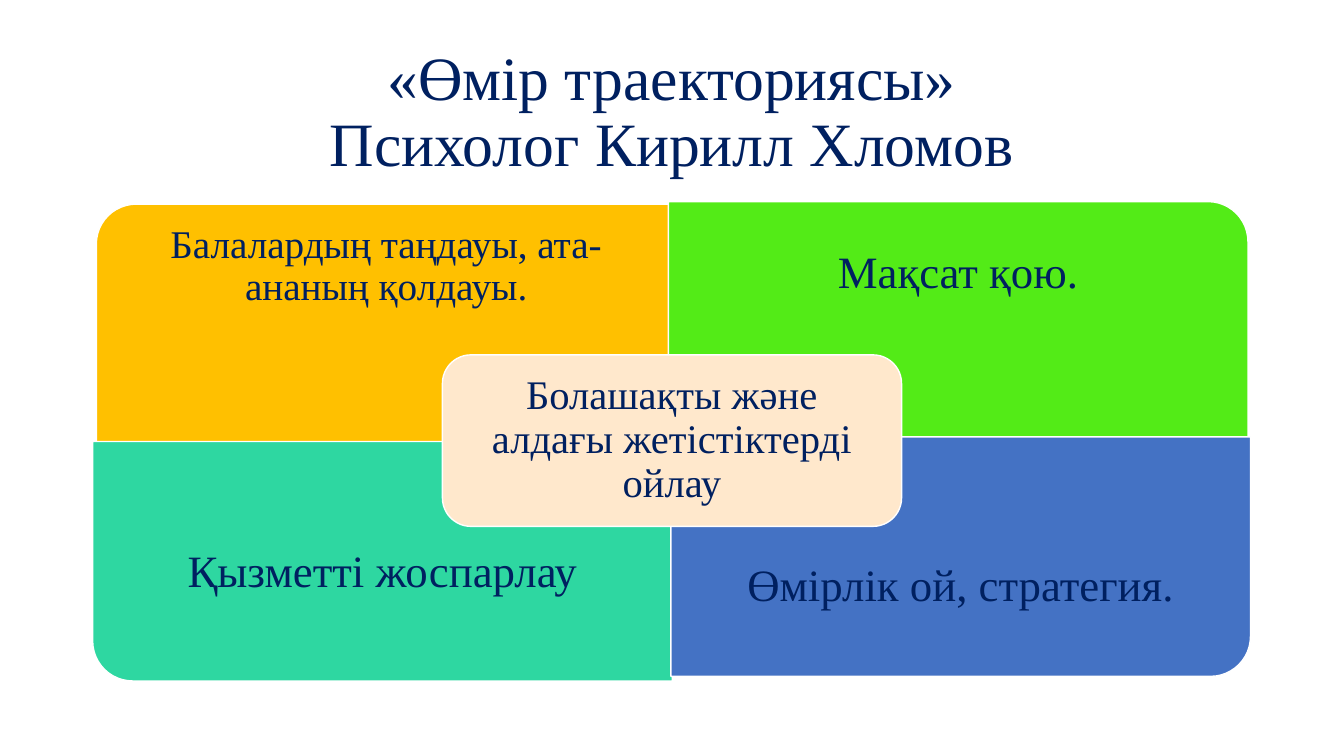
from pptx import Presentation
from pptx import util as u
from pptx.dml.color import RGBColor
from pptx.enum import shapes, text

INK = "002060"
QUAD_W, QUAD_H = 414, 171
LABEL_H = 80


def paint(color_format, value):
    """Set a solid fill or font colour from a hex string."""
    color_format.rgb = RGBColor.from_string(value)


def write(sp, words, size, spacing=0.9, inset=0):
    """Put centred text into a shape or text box."""
    tf = sp.text_frame
    margin = u.Pt(inset)
    frame = dict(word_wrap=True, vertical_anchor=text.MSO_ANCHOR.MIDDLE,
                 margin_left=margin, margin_right=margin,
                 margin_top=margin, margin_bottom=margin)
    for name, value in frame.items():
        setattr(tf, name, value)
    p = tf.paragraphs[0]
    p.text = words
    p.alignment, p.line_spacing = text.PP_ALIGN.CENTER, spacing
    for r in p.runs:
        for name, value in dict(name="Times New Roman", size=u.Pt(size)).items():
            setattr(r.font, name, value)
        paint(r.font.color, INK)


def add_label(s, box, words, size, spacing=0.9, inset=0):
    """Add a text box in the given box."""
    sp = s.shapes.add_textbox(*map(u.Pt, box))
    write(sp, words, size, spacing, inset)


def add_panel(s, kind, box, fill, rotation=0):
    """Add a white-edged panel that covers the box after its rotation."""
    x, y, w, h = box
    if rotation % 180:
        x, y, w, h = x + (w - h) / 2, y + (h - w) / 2, h, w
    sp = s.shapes.add_shape(kind, *map(u.Pt, (x, y, w, h)))
    sp.rotation = rotation
    sp.shadow.inherit = False
    sp.fill.solid()
    paint(sp.fill.fore_color, fill)
    paint(sp.line.color, "FFFFFF")
    sp.line.width = u.Pt(1)
    return sp


def add_quadrant(s, box, fill, rotation, words, size, spacing, middle):
    """Add a quadrant with its label centred at a depth below its top."""
    x, y, w, h = box
    add_panel(s, shapes.MSO_SHAPE.ROUND_1_RECTANGLE, box, fill, rotation)
    add_label(s, (x, y + middle - LABEL_H / 2, w, LABEL_H),
              words, size, spacing, inset=16)


def add_matrix(s, quadrants):
    """Add the four quadrants and the centre panel over them."""
    for x, y, *rest in quadrants:
        add_quadrant(s, (x, y, QUAD_W, QUAD_H), *rest)
    centre = add_panel(s, shapes.MSO_SHAPE.ROUNDED_RECTANGLE,
                       (316, 253.5, 328, 122.5), "FFE8CC")
    write(centre, "Болашақты және алдағы жетістіктерді ойлау", 29, inset=15)


def main():
    """Build and save the slide."""
    prs = Presentation()
    prs.slide_width, prs.slide_height = u.Pt(960), u.Pt(540)
    s = prs.slides.add_slide(prs.slide_layouts[6])
    add_label(s, (66, 29, 828, 104),
              "«Өмір траекториясы»\vПсихолог Кирилл Хломов", 44)
    add_matrix(s, [
        (68.8, 145.8, "FFC000", 270,
         "Балалардың таңдауы, ата-ананың қолдауы.", 28, 0.9, 44.6),
        (477.4, 144, "53EB17", 0, "Мақсат қою.", 32, 1, 49.3),
        (66.2, 315.4, "2ED7A1", 180, "Қызметті жоспарлау", 32, 1, 91.8),
        (479.2, 312.1, "4472C4", 90, "Өмірлік ой, стратегия.", 32, 0.9, 107),
    ])
    prs.save("out.pptx")


if __name__ == "__main__":
    main()
